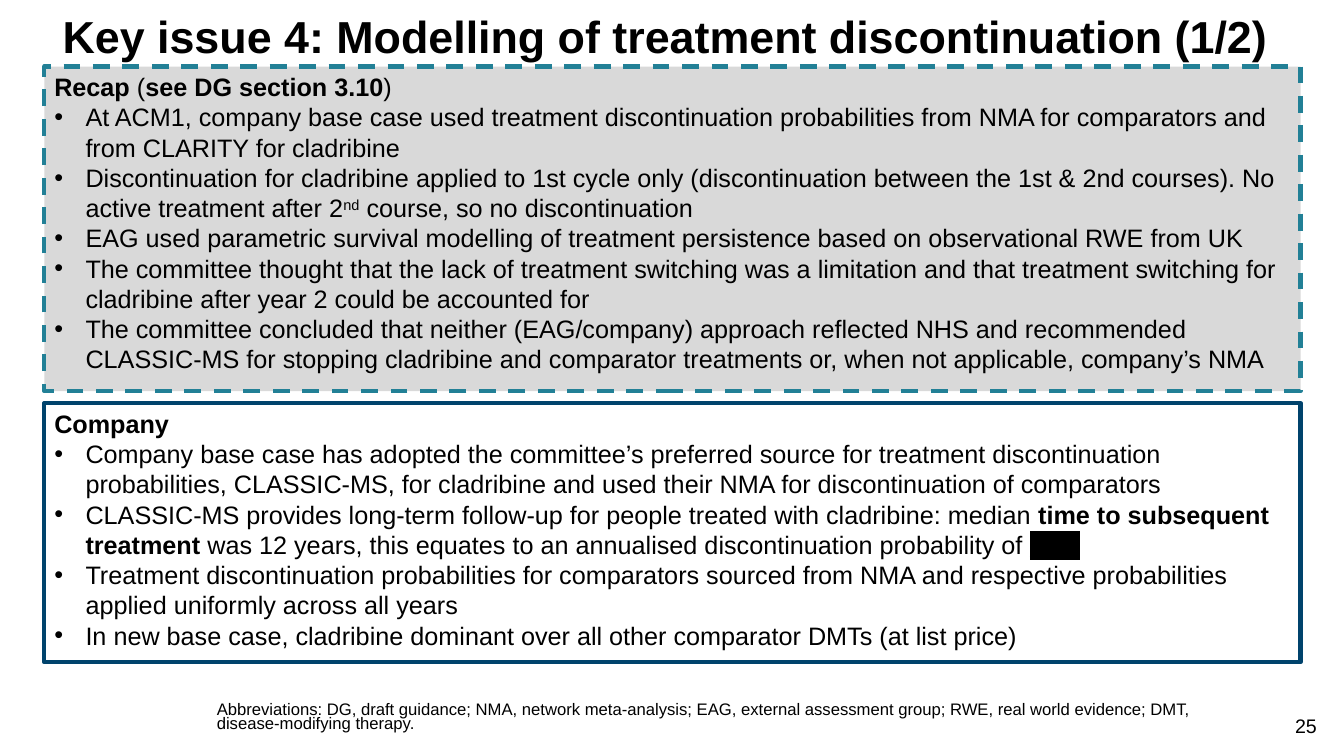
from lxml import etree
from pptx import Presentation
from pptx.dml.color import RGBColor
from pptx.enum.dml import MSO_LINE
from pptx.enum.shapes import MSO_SHAPE
from pptx.enum.text import MSO_ANCHOR, MSO_AUTO_SIZE, PP_ALIGN
from pptx.oxml.ns import qn
from pptx.util import Inches, Pt

RECT = MSO_SHAPE.RECTANGLE
DASH = MSO_LINE.DASH
TOP, MIDDLE = MSO_ANCHOR.TOP, MSO_ANCHOR.MIDDLE
LEFT, RIGHT = PP_ALIGN.LEFT, PP_ALIGN.RIGHT
FIXED = MSO_AUTO_SIZE.NONE

BLACK = RGBColor(0x00, 0x00, 0x00)
GREY = RGBColor(0xD9, 0xD9, 0xD9)
TEAL = RGBColor(0x22, 0x80, 0x96)
NAVY = RGBColor(0x00, 0x43, 0x6C)
FONT = "Arial"

TITLE = "Key issue 4: Modelling of treatment discontinuation (1/2)"
RECAP = [
    [("Recap", "bold"), (" (", ""), ("see DG section 3.10", "bold"), (")", "")],
    [("At ACM1, company base case used treatment discontinuation probabilities "
      "from NMA for comparators and from CLARITY for cladribine", "")],
    [("Discontinuation for cladribine applied to 1st cycle only (discontinuation "
      "between the 1st & 2nd courses). No active treatment after 2", ""),
     ("nd", "super"), (" course, so no discontinuation", "")],
    [("EAG used parametric survival modelling of treatment persistence based on "
      "observational RWE from UK", "")],
    [("The committee thought that the lack of treatment switching was a limitation "
      "and that treatment switching for cladribine after year 2 could be "
      "accounted for", "")],
    [("The committee concluded that neither (EAG/company) approach reflected NHS "
      "and recommended CLASSIC-MS for stopping cladribine and comparator "
      "treatments or, when not applicable, company’s NMA", "")],
]
COMPANY = [
    [("Company", "bold")],
    [("Company base case has adopted the committee’s preferred source for treatment "
      "discontinuation probabilities, CLASSIC-MS, for cladribine and used their "
      "NMA for discontinuation of comparators", "")],
    [("CLASSIC-MS provides long-term follow-up for people treated with cladribine: "
      "median ", ""), ("time to subsequent treatment", "bold"),
     (" was 12 years, this equates to an annualised discontinuation "
      "probability of ", ""), ("XXX", "redact")],
    [("Treatment discontinuation probabilities for comparators sourced from NMA and "
      "respective probabilities applied uniformly across all years", "")],
    [("In new base case, cladribine dominant over all other comparator DMTs "
      "(at list price)", "")],
]
NOTE = ("Abbreviations: DG, draft guidance; NMA, network meta-analysis; EAG, external "
        "assessment group; RWE, real world evidence; DMT, disease-modifying therapy.")


def place(shape, box):
    shape.left, shape.top, shape.width, shape.height = map(Inches, box)


def set_frame(shape, anchor):
    frame = shape.text_frame
    frame.word_wrap = True
    frame.auto_size = FIXED
    frame.vertical_anchor = anchor
    return frame


def add_run(para, text, size, style=""):
    run = para.add_run()
    run.text = text
    font = run.font
    font.size = Pt(size)
    font.bold = style == "bold"
    font.color.rgb = BLACK
    font.name = FONT
    props = run._r.get_or_add_rPr()
    if style == "super":
        props.set("baseline", "30000")
    if style == "redact":
        font.underline = True
        mark = etree.Element(qn("a:highlight"))
        etree.SubElement(mark, qn("a:srgbClr")).set("val", str(BLACK))
        props.find(qn("a:latin")).addprevious(mark)


def set_bullet(para, mark, indent):
    props = para._p.get_or_add_pPr()
    props.set("marL", str(Inches(indent)))
    props.set("indent", str(-Inches(indent)))
    if mark:
        etree.SubElement(props, qn("a:buFont")).set("typeface", FONT)
        etree.SubElement(props, qn("a:buChar")).set("char", mark)
    else:
        etree.SubElement(props, qn("a:buNone"))


def add_title(slide, box):
    title = slide.shapes.title
    place(title, box)
    para = set_frame(title, MIDDLE).paragraphs[0]
    para.alignment = LEFT
    para.line_spacing = 0.9
    add_run(para, TITLE, 32, "bold")


def add_panel(slide, box, lines, edge, fill=None, dash=None):
    panel = slide.shapes.add_shape(RECT, *map(Inches, box))
    panel.shadow.inherit = False
    if fill is None:
        panel.fill.background()
    else:
        panel.fill.solid()
        panel.fill.fore_color.rgb = fill
    panel.line.color.rgb = edge
    panel.line.width = Pt(3)
    if dash is not None:
        panel.line.dash_style = dash
    frame = set_frame(panel, TOP)
    for row, runs in enumerate(lines):
        para = frame.add_paragraph() if row else frame.paragraphs[0]
        para.alignment = LEFT
        if row:
            set_bullet(para, "•", 0.31)
        for text, style in runs:
            add_run(para, text, 18, style)


def add_note(slide, box):
    note = slide.placeholders[1]
    place(note, box)
    para = set_frame(note, TOP).paragraphs[0]
    para.line_spacing = 0.7
    para.space_before = Pt(0)
    set_bullet(para, None, 0)
    add_run(para, NOTE, 11.9)


def add_number(slide, box):
    number = slide.shapes.add_textbox(*map(Inches, box))
    para = set_frame(number, MIDDLE).paragraphs[0]
    para.alignment = RIGHT
    add_run(para, "25", 14)


def main():
    deck = Presentation()
    deck.slide_width = Inches(13.33)
    deck.slide_height = Inches(7.5)
    slide = deck.slides.add_slide(deck.slide_layouts[1])
    add_title(slide, (0.52, 0.06, 12.3, 0.65))
    add_panel(slide, (0.44, 0.66, 12.46, 3.22), RECAP, TEAL, GREY, DASH)
    add_panel(slide, (0.44, 4, 12.46, 2.57), COMPANY, NAVY)
    add_note(slide, (2.05, 6.94, 9.94, 0.4))
    add_number(slide, (12.65, 7, 0.51, 0.4))
    deck.save("out.pptx")


if __name__ == "__main__":
    main()
